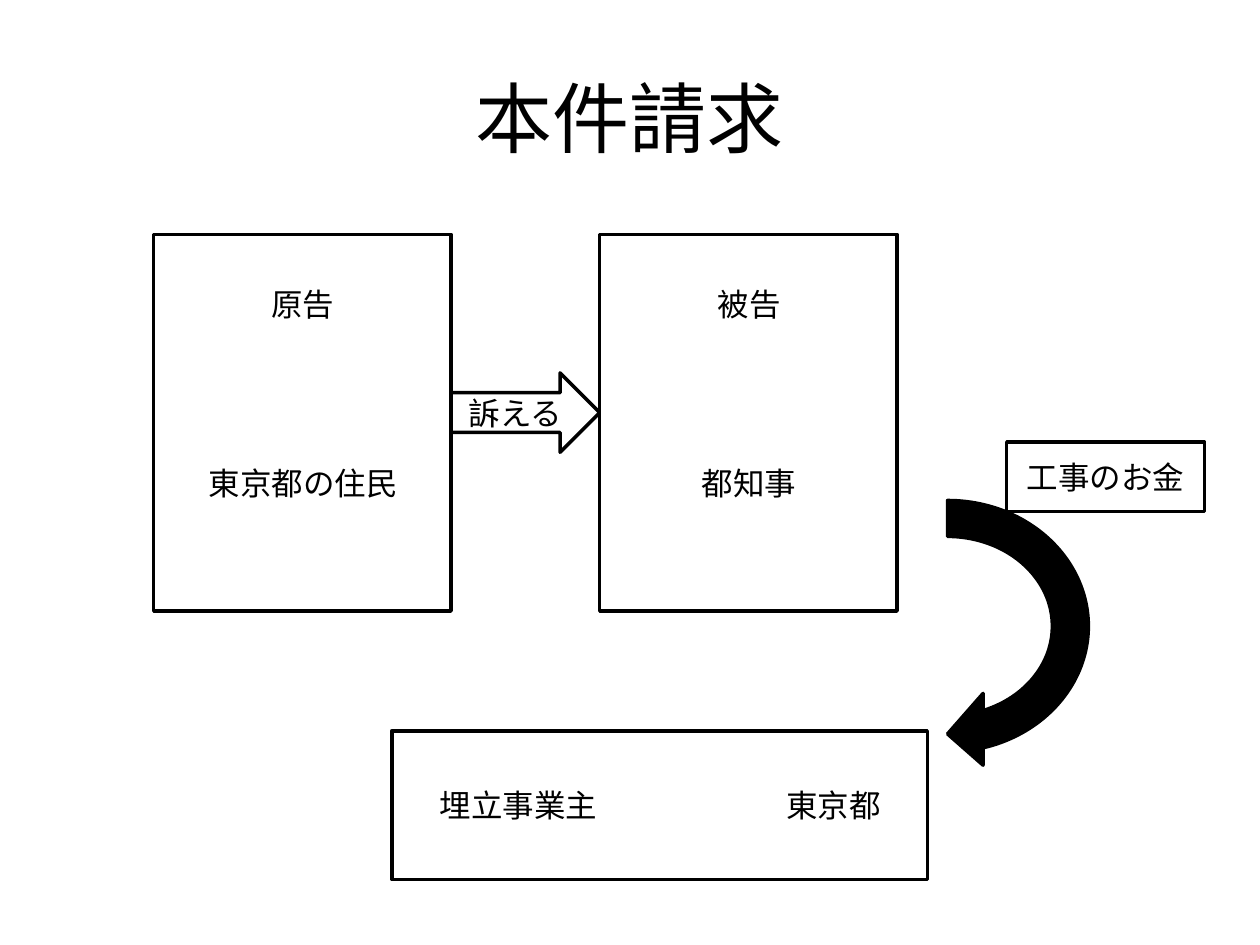
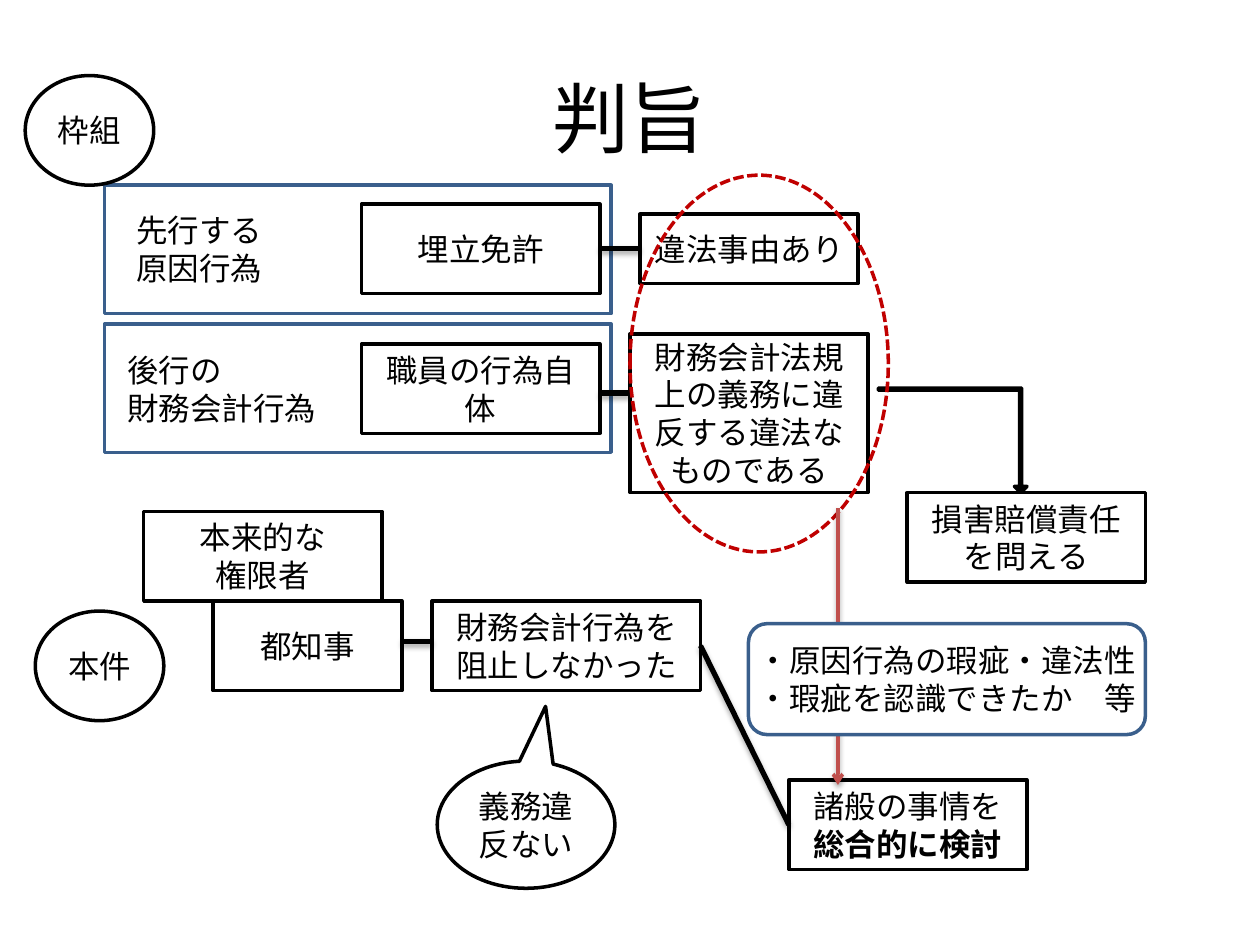
from lxml import etree
from pptx import Presentation
from pptx.dml.color import RGBColor
from pptx.enum import dml, shapes, text
from pptx.oxml import ns
from pptx.util import Inches, Pt

COLORS = {"ink": "000000", "paper": "FFFFFF", "frame": "3A5F8C",
          "focus": "C00000", "flow": "C0504D"}
FONT = "Calibri"
BODY_SIZE = 18
SHAPE = shapes.MSO_SHAPE
ALIGN = text.PP_ALIGN


def rgb(name):
    return RGBColor.from_string(COLORS[name])


def sub(parent, tag, **attrs):
    return etree.SubElement(parent, ns.qn(tag), attrs)


def add_run(p, words, size=BODY_SIZE, bold=None):
    r = p.add_run()
    r.text = words
    r.font.size = Pt(size)
    r.font.name = FONT
    r.font.bold = bold
    r.font.color.rgb = rgb("ink")


def write(sp, *lines, align=ALIGN.CENTER):
    tf = sp.text_frame
    tf.word_wrap = True
    tf.vertical_anchor = text.MSO_ANCHOR.MIDDLE
    for i, line in enumerate(lines):
        p = tf.add_paragraph() if i else tf.paragraphs[0]
        p.alignment = align
        add_run(p, line)


def add_box(slide, at, *lines, kind=SHAPE.RECTANGLE, fill="paper", line="ink",
            align=ALIGN.CENTER):
    """Add a preset shape; fill or line may be None."""
    sp = slide.shapes.add_shape(kind, *map(Inches, at))
    sp.shadow.inherit = False
    if fill:
        sp.fill.solid()
        sp.fill.fore_color.rgb = rgb(fill)
    else:
        sp.fill.background()
    if line:
        sp.line.color.rgb = rgb(line)
        sp.line.width = Pt(2)
    else:
        sp.line.fill.background()
    write(sp, *lines, align=align)
    return sp


def add_label(slide, at, *lines, align=ALIGN.CENTER):
    return add_box(slide, at, *lines, line=None, align=align)


def add_frame(slide, at, line="ink"):
    return add_box(slide, at, fill=None, line=line)


def adjust(sp, *values):
    for i, value in enumerate(values):
        sp.adjustments[i] = value


def add_link(slide, start, end, color="ink", width=3, arrow=False):
    """Add a straight line with a soft shadow below it."""
    cx = slide.shapes.add_connector(shapes.MSO_CONNECTOR.STRAIGHT,
                                    *map(Inches, (*start, *end)))
    cx.line.color.rgb = rgb(color)
    cx.line.width = Pt(width)
    if arrow:
        sub(cx.line._get_or_add_ln(), "a:tailEnd", type="arrow")
    effects = sub(cx._element.spPr, "a:effectLst")
    shadow = sub(effects, "a:outerShdw", blurRad=str(Pt(3.1)), dist=str(Pt(1.8)),
                 dir="5400000", rotWithShape="0")
    shade = sub(shadow, "a:srgbClr", val=COLORS["ink"])
    sub(shade, "a:alpha", val="35000")
    return cx


def join(slide, left_box, right_box):
    """Link the right side of one box to the left side of another."""
    cx = add_link(slide, (0, 0), (1, 1))
    cx.begin_connect(left_box, 3)
    cx.end_connect(right_box, 1)


def add_titled_slide(prs, title):
    slide = prs.slides.add_slide(prs.slide_layouts[5])
    sp = slide.shapes.title
    sp.left, sp.top, sp.width, sp.height = map(Inches, (0.5, 0.3, 9, 1.25))
    sp.text_frame.vertical_anchor = text.MSO_ANCHOR.MIDDLE
    p = sp.text_frame.paragraphs[0]
    p.alignment = ALIGN.CENTER
    add_run(p, title, size=44)
    return slide


def build_claim(prs):
    slide = add_titled_slide(prs, "本件請求")
    add_box(slide, (7.99, 3.51, 1.57, 0.55), "工事のお金")

    owner = add_box(slide, (3.11, 5.8, 4.25, 1.18), "埋立事業主\t東京都",
                    align=ALIGN.LEFT)
    owner.text_frame.margin_left = Inches(0.38)
    tabs = sub(owner.text_frame.paragraphs[0]._p.get_or_add_pPr(), "a:tabLst")
    sub(tabs, "a:tab", pos=str(Inches(2.75)), algn="l")

    for left, role, party in ((1.22, "原告", "東京都の住民"),
                              (4.76, "被告", "都知事")):
        add_label(slide, (left + 0.4, 2.1, 1.57, 0.63), role)
        add_label(slide, (left + 0.24, 3.44, 1.89, 0.79), party)
        add_frame(slide, (left, 1.86, 2.36, 2.99))

    add_box(slide, (3.58, 2.96, 1.18, 0.63), "訴える", kind=SHAPE.RIGHT_ARROW)
    payment = add_box(slide, (6.38, 3.71, 2.28, 2.52),
                      kind=SHAPE.CIRCULAR_ARROW, fill="ink")
    payment.rotation = 90


def build_ruling(prs):
    slide = add_titled_slide(prs, "判旨")

    add_label(slide, (0.91, 1.62, 1.34, 0.71), "先行する原因行為")
    add_label(slide, (0.91, 2.73, 1.81, 0.71), "後行の", "財務会計行為",
              align=ALIGN.LEFT)
    licence = add_box(slide, (2.87, 1.62, 1.89, 0.71), "埋立免許")
    add_box(slide, (2.87, 2.73, 1.89, 0.71), "職員の行為自体")
    illegality = add_box(slide, (5.08, 1.7, 1.73, 0.55), "違法事由あり")
    add_box(slide, (5, 2.65, 1.89, 1.26),
            "財務会計法規上の義務に違反する違法なものである")
    add_box(slide, (7.2, 3.91, 1.89, 0.71), "損害賠償責任を問える")

    add_box(slide, (1.69, 4.77, 1.5, 0.71), "都知事")
    add_box(slide, (1.14, 4.06, 1.89, 0.71), "本来的な", "権限者")
    omission = add_box(slide, (3.43, 4.77, 2.13, 0.71), "財務会計行為を阻止しなかった")
    review = add_box(slide, (6.26, 6.19, 1.89, 0.71), "諸般の事情を")
    add_run(review.text_frame.paragraphs[0], "総合的に検討", bold=True)

    # Half a turn plus a mirror makes the arrow run right, then down.
    liability = add_box(slide, (6.97, 3.08, 1.18, 0.83),
                        kind=SHAPE.BENT_UP_ARROW, fill="ink")
    liability.rotation = 180
    liability._element.spPr.xfrm.set("flipH", "1")
    adjust(liability, 0.02, 0.06, 0.06)

    for top in (1.47, 2.57):
        add_frame(slide, (0.83, top, 4.02, 1.02), line="frame")

    join(slide, licence, illegality)
    add_link(slide, (4.76, 3.12), (5, 3.12))
    add_link(slide, (3.19, 5.09), (3.43, 5.09))
    join(slide, omission, review)

    focus = add_box(slide, (5, 1.39, 2.05, 2.99), kind=SHAPE.OVAL,
                    fill=None, line="focus")
    focus.line.dash_style = dml.MSO_LINE.SQUARE_DOT
    for left, top, heading in ((0.28, 4.85, "本件"), (0.2, 0.6, "枠組")):
        add_box(slide, (left, top, 1.02, 0.87), heading, kind=SHAPE.OVAL)

    callout = add_box(slide, (3.47, 6.04, 1.41, 1.01), "義務違反ない",
                      kind=SHAPE.OVAL_CALLOUT)
    adjust(callout, 0.11, -0.93)

    add_link(slide, (6.65, 4.03), (6.65, 6.23), color="flow", width=2, arrow=True)
    factors = add_box(slide, (5.94, 4.95, 3.15, 0.88),
                      "・原因行為の瑕疵・違法性", "・瑕疵を認識できたか　等",
                      kind=SHAPE.ROUNDED_RECTANGLE, line="frame")
    factors.text_frame.margin_left = factors.text_frame.margin_right = 0


def main():
    prs = Presentation()
    prs.slide_width, prs.slide_height = Inches(10), Inches(7.5)
    build_claim(prs)
    build_ruling(prs)
    prs.save("out.pptx")


if __name__ == "__main__":
    main()
